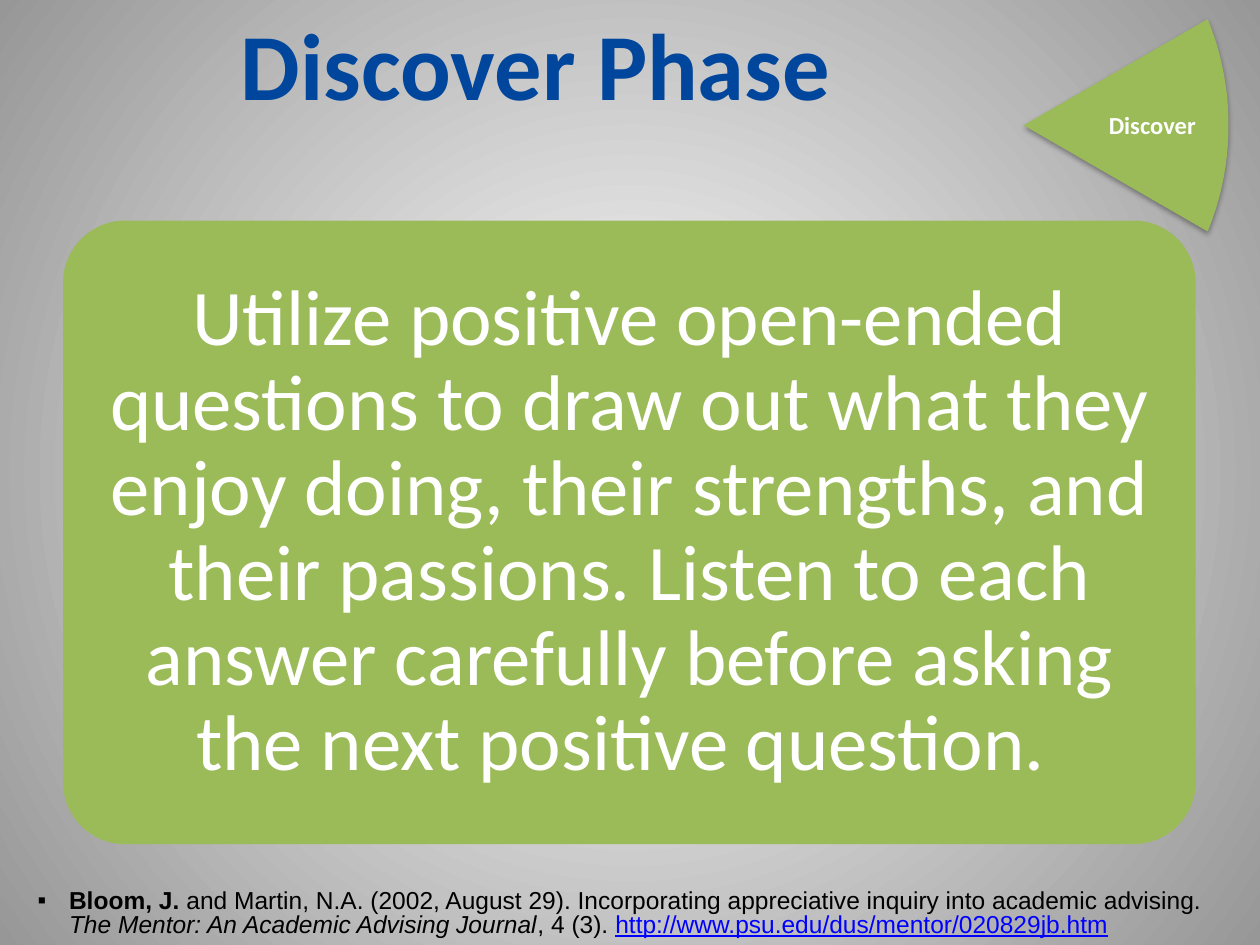
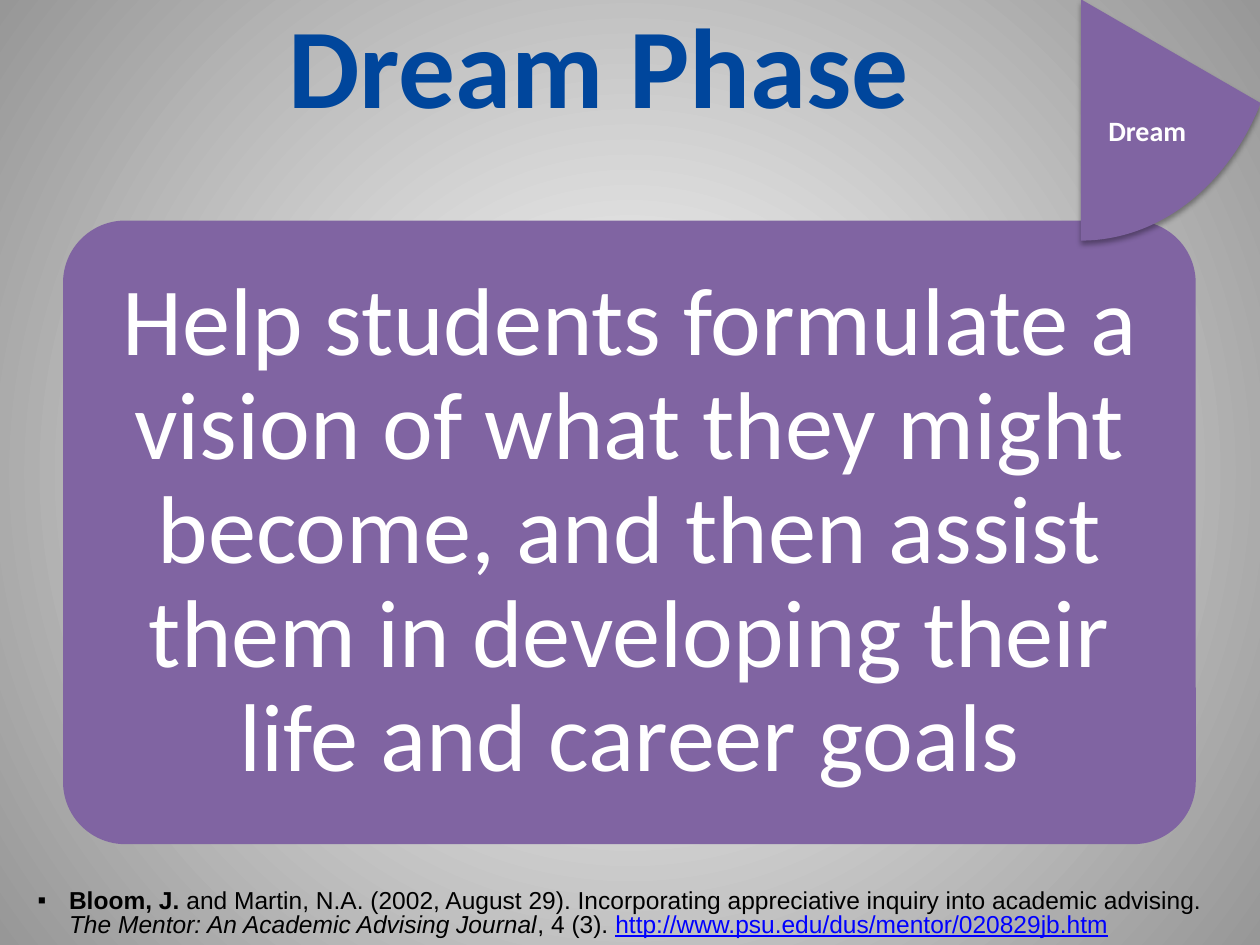
from dataclasses import dataclass
from typing import NamedTuple

from lxml import etree
from pptx import Presentation
from pptx import util as u
from pptx.dml.color import RGBColor
from pptx.enum import shapes, text
from pptx.oxml.ns import qn

PX = 9144  # EMU in one px, 100 px to the inch


@dataclass(frozen=True)
class Theme:
    title: str = "00469C"
    on_colour: str = "FFFFFF"
    ink: str = "000000"
    address: str = "0000FF"
    glow: str = "FFFFFF"
    edge: str = "979797"
    discover: str = "9BBB59"
    dream: str = "8064A2"
    heading_font: str = "Calibri"
    citation_font: str = "Arial"
    citation_size: float = 14


class Box(NamedTuple):
    left: int
    top: int
    width: int
    height: int

    def emu(self) -> list[int]:
        return [side * PX for side in self]

    def inset(self, by: int) -> "Box":
        return Box(self.left + by, self.top + by,
                   self.width - 2 * by, self.height - 2 * by)


class Style(NamedTuple):
    font: str
    size: float
    colour: str
    bold: bool = False
    italic: bool = False
    underline: bool = False


@dataclass(frozen=True)
class Phase:
    name: str
    colour: str
    title_width: int
    title_size: float
    advice: str
    advice_size: float
    advice_margin: int
    wheel: Box
    start_degrees: int
    end_degrees: int
    label: Box
    label_size: float


THEME = Theme()
CARD = Box(50, 175, 899, 495)
CARD_TEXT = CARD.inset(14)
CITATION = Box(0, 702, 1000, 48)
BULLET_MARGIN, BULLET_HANG = 45, 25

PLAIN = Style(THEME.citation_font, THEME.citation_size, THEME.ink)
REFERENCE = [
    ("Bloom, J.", PLAIN._replace(bold=True)),
    (" and Martin, N.A. (2002, August 29). Incorporating appreciative "
     "inquiry into academic advising. ", PLAIN),
    ("The Mentor: An Academic Advising Journal", PLAIN._replace(italic=True)),
    (", 4 (3). ", PLAIN),
    ("http://www.psu.edu/dus/mentor/020829jb.htm",
     PLAIN._replace(colour=THEME.address, underline=True)),
]

PHASES = [
    Phase("Discover", THEME.discover, 850, 54,
          "Utilize positive open-ended questions to draw out what they enjoy "
          "doing, their strengths, and their passions. Listen to each answer "
          "carefully before asking the next positive question. ",
          45, 19, Box(650, -92, 325, 383), 330, 30, Box(870, 63, 89, 75), 14),
    Phase("Dream", THEME.dream, 950, 64.8,
          "Help students formulate a vision of what they might become, and "
          "then assist them in developing their life and career goals",
          55, 23, Box(700, -192, 316, 383), 30, 90, Box(869, 66, 83, 78), 16),
]


def add_run(paragraph, words: str, style: Style) -> None:
    run = paragraph.add_run()
    run.text = words
    font = run.font
    font.name, font.size = style.font, u.Pt(style.size)
    font.bold, font.italic, font.underline = style.bold, style.italic, style.underline
    font.color.rgb = RGBColor.from_string(style.colour)


def add_child(parent, tag: str, **attributes):
    return etree.SubElement(parent, qn(tag), attributes)


def set_background(master) -> None:
    """Give every slide a gradient that darkens from the centre outwards."""
    fill = master.background.fill
    fill.gradient()
    for stop, colour in zip(fill.gradient_stops, (THEME.glow, THEME.edge)):
        stop.color.rgb = RGBColor.from_string(colour)
    gradient = master.element.find(".//" + qn("a:gradFill"))
    gradient.remove(gradient.find(qn("a:lin")))
    circle = add_child(gradient, "a:path", path="circle")
    add_child(circle, "a:fillToRect", l="50000", t="50000", r="50000", b="50000")


def add_filled(group, preset, box: Box, colour: str):
    shape = group.shapes.add_shape(preset, *box.emu())
    shape.shadow.inherit = False
    shape.fill.solid()
    shape.fill.fore_color.rgb = RGBColor.from_string(colour)
    shape.line.fill.background()
    return shape


def add_centred_text(group, box: Box, margin: int, words: str, style: Style) -> None:
    frame = group.shapes.add_textbox(*box.emu()).text_frame
    frame.word_wrap = True
    frame.vertical_anchor = text.MSO_ANCHOR.MIDDLE
    frame.margin_left = frame.margin_right = margin * PX
    frame.margin_top = frame.margin_bottom = margin * PX
    paragraph = frame.paragraphs[0]
    paragraph.alignment = text.PP_ALIGN.CENTER
    paragraph.line_spacing = 0.9
    add_run(paragraph, words, style)


def add_soft_shadow(shape) -> None:
    effects = shape.element.spPr.find(qn("a:effectLst"))
    shadow = add_child(effects, "a:outerShdw", blurRad=str(u.Pt(3.1)),
                       dist=str(u.Pt(1.8)), dir="5400000", rotWithShape="0")
    add_child(add_child(shadow, "a:srgbClr", val="000000"), "a:alpha", val="35000")


def add_title(slide, phase: Phase) -> None:
    title = slide.shapes.title
    title.left, title.top, title.width, title.height = Box(0, 0, phase.title_width, 100).emu()
    frame = title.text_frame
    frame.auto_size = text.MSO_AUTO_SIZE.NONE
    frame.vertical_anchor = text.MSO_ANCHOR.MIDDLE
    paragraph = frame.paragraphs[0]
    paragraph.alignment = text.PP_ALIGN.CENTER
    add_run(paragraph, f"{phase.name} Phase",
            Style(THEME.heading_font, phase.title_size, THEME.title, bold=True))


def add_advice_card(slide, phase: Phase) -> None:
    group = slide.shapes.add_group_shape()
    card = add_filled(group, shapes.MSO_SHAPE.ROUNDED_RECTANGLE, CARD, phase.colour)
    card.adjustments[0] = 0.1
    add_centred_text(group, CARD_TEXT, phase.advice_margin, phase.advice,
                     Style(THEME.heading_font, phase.advice_size, THEME.on_colour))


def add_citation(slide) -> None:
    box = slide.shapes.add_textbox(*CITATION.emu())
    frame = box.text_frame
    frame.word_wrap = True
    frame.auto_size = text.MSO_AUTO_SIZE.SHAPE_TO_FIT_TEXT
    paragraph = frame.paragraphs[0]
    paragraph.line_spacing = 0.8
    for words, style in REFERENCE:
        add_run(paragraph, words, style)
    properties = paragraph._p.get_or_add_pPr()
    properties.set("marL", str(BULLET_MARGIN * PX))
    properties.set("indent", str(-BULLET_HANG * PX))
    add_child(properties, "a:buFont", typeface=THEME.citation_font)
    add_child(properties, "a:buChar", char="▪")


def add_wheel_slice(slide, phase: Phase) -> None:
    """Draw the phase's 60 degree slice of the wheel with its label."""
    group = slide.shapes.add_group_shape()
    wedge = add_filled(group, shapes.MSO_SHAPE.PIE, phase.wheel, phase.colour)
    for index, degrees in enumerate((phase.start_degrees, phase.end_degrees)):
        wedge.adjustments[index] = degrees * 0.6  # 60000 units to the degree
    add_soft_shadow(wedge)
    add_centred_text(group, phase.label, 3, phase.name,
                     Style(THEME.heading_font, phase.label_size, THEME.on_colour, bold=True))


def main() -> None:
    deck = Presentation()
    deck.slide_width, deck.slide_height = 1000 * PX, 750 * PX
    set_background(deck.slide_master)
    title_only = deck.slide_layouts.get_by_name("Title Only")
    for phase in PHASES:
        slide = deck.slides.add_slide(title_only)
        add_title(slide, phase)
        add_advice_card(slide, phase)
        add_citation(slide)
        add_wheel_slice(slide, phase)
    deck.save("out.pptx")


if __name__ == "__main__":
    main()
